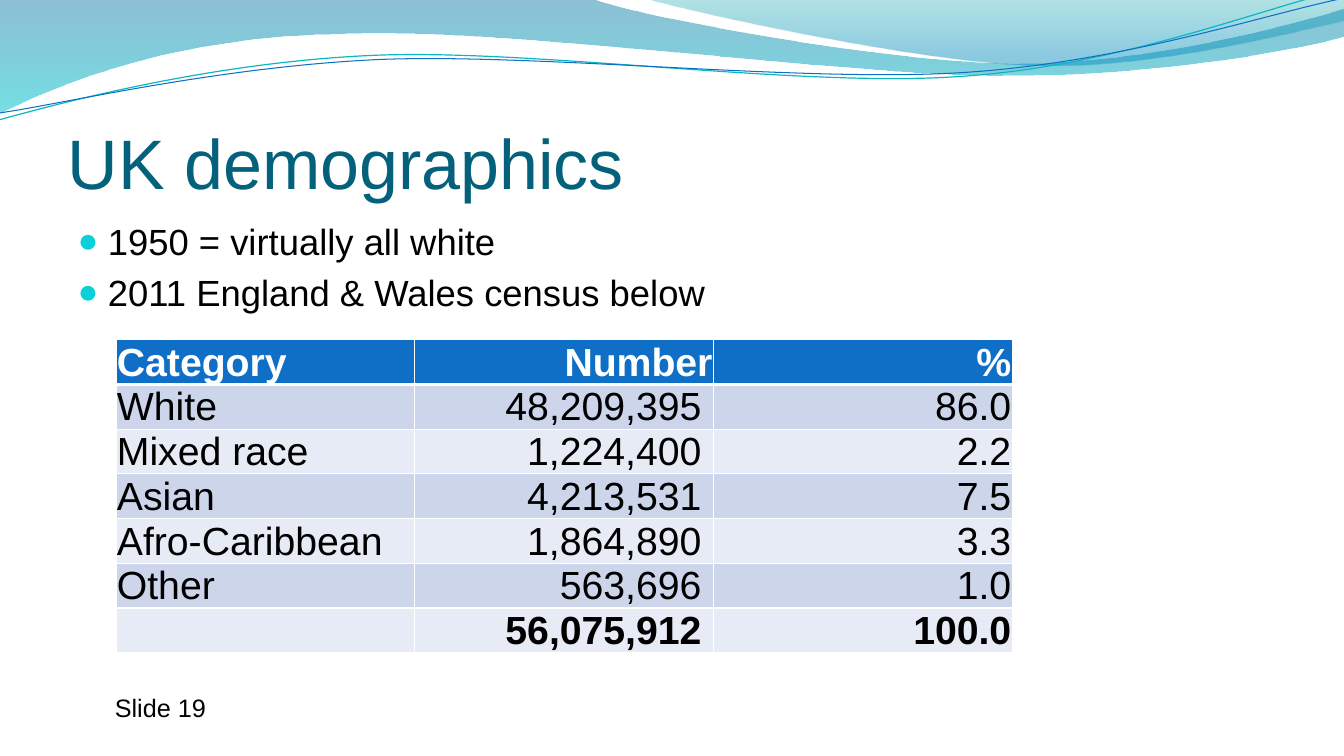
from dataclasses import dataclass
from math import cos, radians, sin

from lxml import etree
from pptx import Presentation
from pptx.dml.color import RGBColor
from pptx.enum.text import MSO_ANCHOR, MSO_AUTO_SIZE, PP_ALIGN
from pptx.oxml.ns import qn
from pptx.shapes.autoshape import Shape
from pptx.slide import Slide
from pptx.table import Table, _Cell
from pptx.text.text import TextFrame
from pptx.util import Inches, Pt

LEFT, RIGHT = PP_ALIGN.LEFT, PP_ALIGN.RIGHT
BOTTOM = MSO_ANCHOR.BOTTOM
NO_AUTOFIT, FIT_SHAPE = MSO_AUTO_SIZE.NONE, MSO_AUTO_SIZE.SHAPE_TO_FIT_TEXT
FONT = "Arial"
BLACK, WHITE, BLUE = "000000", "FFFFFF", "0F6FC6"
BANDS = ("CCD5EA", "E7EBF5")
TILT = 2.7

Point = tuple[float, float]


@dataclass(frozen=True)
class Stop:
    position: float
    color: str
    opacity: int


@dataclass(frozen=True)
class Wave:
    start: Point
    segments: tuple[tuple[float, ...], ...]
    stops: tuple[Stop, ...] = ()
    line_color: str = ""
    line_width: float = 0
    center: Point = (0, 0)


WAVES = (
    Wave(
        (0, 0),
        (
            (5.87, -0.01),
            (6.34, 0.17, 8.85, 0.63, 10.11, 0.63),
            (11.38, 0.63, 12.78, 0.26, 13.33, 0.09),
            (13.35, 0.36),
            (13.11, 0.44, 11.6, 0.76, 9.94, 0.75),
            (8.29, 0.75, 5.09, 0.28, 3.43, 0.34),
            (1.72, 0.36, 0.61, 0.83, -0.01, 1.13),
            (0, 0),
        ),
        stops=(Stop(0, "0074A1", 45), Stop(1, "00C6CF", 55)),
    ),
    Wave(
        (6.39, -0.01),
        (
            (6.79, 0.11, 9.09, 0.62, 10.25, 0.65),
            (11.41, 0.69, 12.82, 0.32, 13.33, 0.21),
            (13.33, 0),
            (6.39, -0.01),
        ),
        stops=(Stop(0, "00A1A9", 30), Stop(0.8, "008BBF", 45)),
    ),
    Wave(
        (-0.01, 1.19),
        (
            (0.64, 1.01, 2.11, 0.62, 3.69, 0.55),
            (5.27, 0.48, 7.9, 0.87, 9.5, 0.76),
            (11.1, 0.66, 12.52, 0.08, 13.31, -0.1),
        ),
        line_color="0AB8BF",
        line_width=0.85,
        center=(6.65, 0.57),
    ),
    Wave(
        (0, 1.12),
        (
            (0.63, 1.03, 2.18, 0.66, 3.78, 0.59),
            (5.37, 0.53, 7.96, 0.82, 9.55, 0.72),
            (11.15, 0.62, 12.55, 0.14, 13.34, -0.02),
        ),
        line_color=BLUE,
        line_width=0.75,
        center=(6.67, 0.59),
    ),
)

CENSUS = (
    ("Category", "Number", "%"),
    ("White", "48,209,395", "86.0"),
    ("Mixed race", "1,224,400", "2.2"),
    ("Asian", "4,213,531", "7.5"),
    ("Afro-Caribbean", "1,864,890", "3.3"),
    ("Other", "563,696", "1.0"),
    ("", "56,075,912", "100.0"),
)


def rgb(value: str) -> RGBColor:
    return RGBColor.from_string(value)


def place(shape: Shape, left: float, top: float, width: float, height: float) -> None:
    shape.left, shape.top = Inches(left), Inches(top)
    shape.width, shape.height = Inches(width), Inches(height)


def format_text(frame: TextFrame, size: float, color: str,
                bold: bool = False, align: PP_ALIGN = LEFT) -> None:
    for para in frame.paragraphs:
        para.alignment = align
        for span in para.runs:
            span.font.name = FONT
            span.font.size = Pt(size)
            span.font.bold = bold
            span.font.color.rgb = rgb(color)


def turn(point: Point, center: Point, degrees: float) -> Point:
    dx, dy = point[0] - center[0], point[1] - center[1]
    c, s = cos(radians(degrees)), sin(radians(degrees))
    return center[0] + dx * c - dy * s, center[1] + dx * s + dy * c


def bend_segments(shape: Shape, wave: Wave) -> None:
    lines = list(shape.element.iter(qn("a:lnTo")))
    for segment in wave.segments:
        line = lines.pop(0)
        if len(segment) == 6:
            line.tag = qn("a:cubicBezTo")
            for handle in (lines.pop(0), lines.pop(0)):
                line.append(handle[0])
                handle.getparent().remove(handle)


def fill_gradient(shape: Shape, stops: tuple[Stop, ...]) -> None:
    shape.fill.gradient()
    shape.fill.gradient_angle = 270
    for target, stop in zip(shape.fill.gradient_stops, stops):
        target.position = stop.position
        target.color.rgb = rgb(stop.color)
    colors = shape.element.spPr.iter(qn("a:srgbClr"))
    for color, stop in zip(colors, stops):
        etree.SubElement(color, qn("a:alpha"), val=str(stop.opacity * 1000))


def add_wave(page: Slide, wave: Wave) -> None:
    tilt = 0 if wave.stops else TILT
    points = [wave.start]
    for segment in wave.segments:
        points.extend(zip(segment[::2], segment[1::2]))
    corners = [tuple(map(Inches, turn(point, wave.center, tilt))) for point in points]
    builder = page.shapes.build_freeform(*corners[0])
    builder.add_line_segments(corners[1:], close=bool(wave.stops))
    shape = builder.convert_to_shape()
    bend_segments(shape, wave)
    shape.rotation = -tilt
    shape.shadow.inherit = False
    if wave.stops:
        fill_gradient(shape, wave.stops)
        shape.line.fill.background()
    else:
        shape.fill.background()
        shape.line.color.rgb = rgb(wave.line_color)
        shape.line.width = Pt(wave.line_width)
    page.shapes.title.element.addprevious(shape.element)


def fill_title(title: Shape) -> None:
    place(title, 0.67, 0.77, 12, 1.25)
    frame = title.text_frame
    frame.text = "UK demographics"
    frame.auto_size = NO_AUTOFIT
    frame.vertical_anchor = BOTTOM
    frame.margin_left = frame.margin_right = frame.margin_bottom = 0
    format_text(frame, 50, "04617B")


def fill_body(body: Shape) -> None:
    place(body, 0.67, 2.12, 12, 1.16)
    frame = body.text_frame
    frame.text = "1950 = virtually all white\n2011 England & Wales census below"
    frame.auto_size = NO_AUTOFIT
    format_text(frame, 26, BLACK)
    indent = Inches(0.3)
    for para in frame.paragraphs:
        properties = para._p.get_or_add_pPr()
        properties.set("marL", str(indent))
        properties.set("indent", str(-indent))
        color = etree.SubElement(properties, qn("a:buClr"))
        etree.SubElement(color, qn("a:srgbClr"), val="0BD0D9")
        etree.SubElement(properties, qn("a:buSzPct"), val="95000")
        etree.SubElement(properties, qn("a:buChar"), char="●")


def add_borders(cell: _Cell, widths: dict[str, int]) -> None:
    properties = cell._tc.get_or_add_tcPr()
    for index, (side, width) in enumerate(widths.items()):
        line = etree.Element(qn(f"a:ln{side}"), w=str(Pt(width)))
        fill = etree.SubElement(line, qn("a:solidFill"))
        etree.SubElement(fill, qn("a:srgbClr"), val=WHITE)
        properties.insert(index, line)


def fill_census(table: Table) -> None:
    for row in table.rows:
        row.height = Inches(0.41)
    for r, values in enumerate(CENSUS):
        header, total = r == 0, r == len(CENSUS) - 1
        for c, value in enumerate(values):
            cell = table.cell(r, c)
            cell.text = value
            cell.vertical_anchor = BOTTOM
            cell.margin_left = cell.margin_top = Inches(0.01)
            cell.margin_right = Inches(0.12 if c == 1 and not header else 0.01)
            cell.margin_bottom = 0
            cell.fill.solid()
            cell.fill.fore_color.rgb = rgb(BLUE if header else BANDS[(r - 1) % 2])
            add_borders(cell, {"L": 1, "R": 1, "T": 3 if r == 1 else 1, "B": 3 if header else 1})
            format_text(cell.text_frame, 28, WHITE if header else BLACK,
                        header or total, RIGHT if c else LEFT)


def main() -> None:
    deck = Presentation()
    deck.slide_width, deck.slide_height = Inches(13.33), Inches(7.5)
    page = deck.slides.add_slide(deck.slide_layouts[1])
    for wave in WAVES:
        add_wave(page, wave)
    fill_title(page.shapes.title)
    fill_body(page.placeholders[1])
    frame = page.shapes.add_table(len(CENSUS), 3, Inches(1.15), Inches(3.37), Inches(8.89), Inches(2.87))
    fill_census(frame.table)
    frame.height = Inches(3.34)
    box = page.shapes.add_textbox(Inches(1.04), Inches(6.82), Inches(1.18), Inches(0.4))
    box.text_frame.word_wrap = True
    box.text_frame.auto_size = FIT_SHAPE
    box.text_frame.text = "Slide 19"
    format_text(box.text_frame, 18, BLACK)
    deck.save("out.pptx")


if __name__ == "__main__":
    main()
